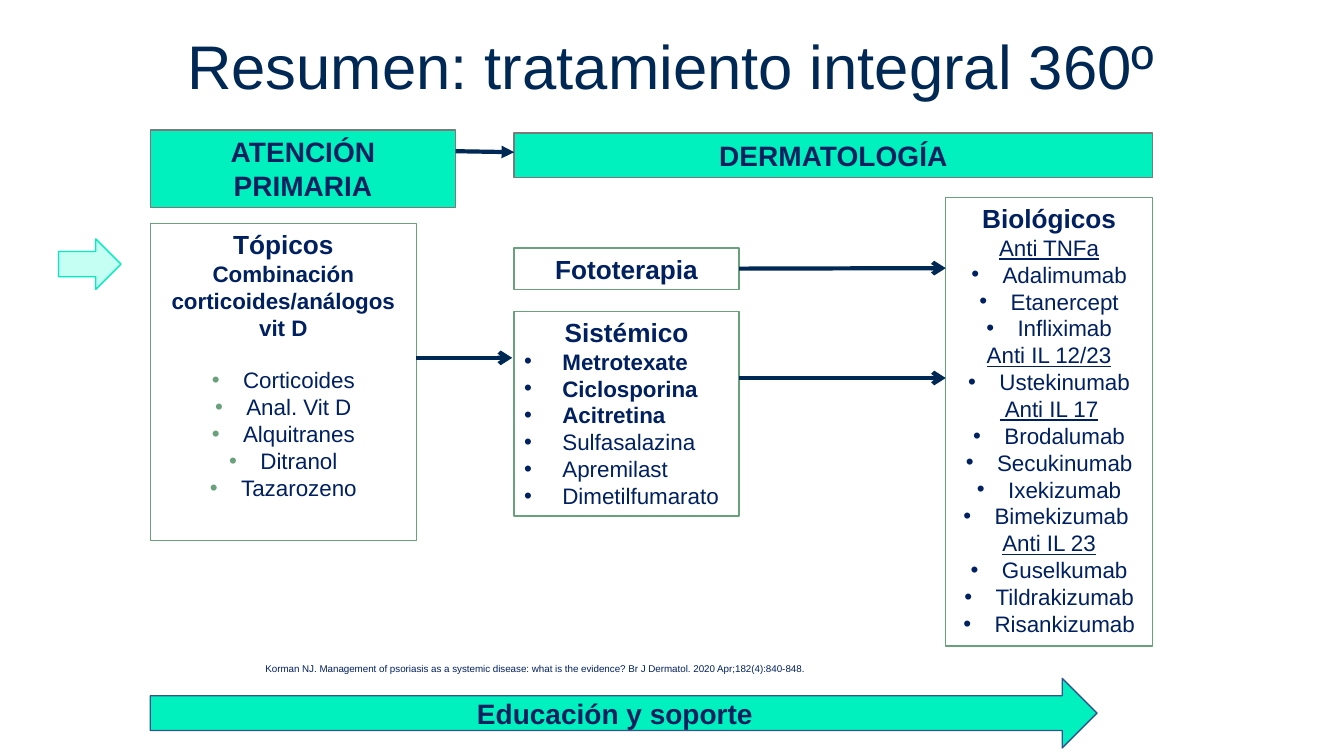
"""Build the slide on 360º treatment of psoriasis, from primary care to dermatology."""
from pptx import Presentation
from pptx.dml.color import RGBColor
from pptx.enum.shapes import MSO_CONNECTOR as LINE, MSO_SHAPE as SHAPE
from pptx.enum.text import MSO_ANCHOR as ANCHOR, MSO_AUTO_SIZE as FIT, PP_ALIGN as ALIGN
from pptx.oxml.ns import qn
from pptx.util import Inches, Pt
from lxml.etree import SubElement

NAVY, INK, GREEN, MINT, WHITE, GREY = "002855", "002060", "68A17C", "00F0BE", "FFFFFF", "7A7A7A"
PRIMARY, SECOND, THIRD, RIGHT = 1.49, 5.1, 9.38, 11.43
SECOND_EDGE = 7.33
PRIMARY_EDGE = 4.13


def paint(color, hex_value):
    color.rgb = RGBColor.from_string(hex_value)


def write(shape, lines, size, bold=False, color=INK, anchor=ANCHOR.TOP, fit=FIT.SHAPE_TO_FIT_TEXT):
    """Fill a shape with (text, style) lines; styles are b bold, u underlined, * bulleted, < left."""
    frame = shape.text_frame
    frame.text = "\n".join(text for text, style in lines)
    frame.word_wrap = True
    frame.auto_size = fit
    frame.vertical_anchor = anchor
    for index, (paragraph, (text, style)) in enumerate(zip(frame.paragraphs, lines)):
        paragraph.alignment = ALIGN.LEFT if "<" in style else ALIGN.CENTER
        if "*" in style:
            indent = Inches(0.38 if "<" in style else 0.31)
            properties = paragraph._p.get_or_add_pPr()
            properties.set("marL", str(indent))
            properties.set("indent", str(-indent))
            if "g" in style:
                bullet_color = SubElement(properties, qn("a:buClr"))
                SubElement(bullet_color, qn("a:srgbClr")).set("val", GREEN)
            SubElement(properties, qn("a:buFont")).set("typeface", "Arial")
            SubElement(properties, qn("a:buChar")).set("char", "•")
        for run in paragraph.runs:
            run.font.name = "Arial"
            run.font.size = Pt(size if index == 0 else 16)
            run.font.bold = bold if index == 0 else "b" in style
            run.font.underline = "u" in style
            paint(run.font.color, color)


prs = Presentation()
prs.slide_width, prs.slide_height = Inches(13.33), Inches(7.5)
slide = prs.slides.add_slide(prs.slide_layouts[6])
shapes = slide.shapes

title = shapes.add_textbox(*map(Inches, (1.21, 0.31, 10.9, 0.61)))
write(title, [("Resumen: tratamiento integral 360º", "")], 44, color=NAVY, fit=FIT.NONE)
title.text_frame.paragraphs[0].line_spacing = 0.9

biologic_groups = [
    ("Anti TNFa", ["Adalimumab", "Etanercept", "Infliximab"]),
    ("Anti IL 12/23", ["Ustekinumab"]),
    (" Anti IL 17", ["Brodalumab", "Secukinumab", "Ixekizumab", "Bimekizumab "]),
    ("Anti IL 23", ["Guselkumab", "Tildrakizumab", "Risankizumab"]),
]
biologics = [("Biológicos", "")]
for target, drugs in biologic_groups:
    biologics += [(target, "u")] + [(drug, "*") for drug in drugs]
topicals = [("Tópicos", ""), ("Combinación corticoides/análogos vit D", "b")]
topicals += [(drug, "*g") for drug in ("Corticoides", "Anal. Vit D", "Alquitranes", "Ditranol", "Tazarozeno")]
systemics = [("Sistémico", "")]
systemics += [(drug, "*<b") for drug in ("Metrotexate", "Ciclosporina", "Acitretina")]
systemics += [(drug, "*<") for drug in ("Sulfasalazina", "Apremilast", "Dimetilfumarato")]

panels = {}
for name, kind, left, top, right, height, fill, outline, lines, size, anchor in (
    ("biologics", SHAPE.RECTANGLE, THIRD, 1.96, RIGHT, 4.45, WHITE, GREEN, biologics, 18.7, ANCHOR.TOP),
    ("phototherapy", SHAPE.RECTANGLE, SECOND, 2.46, SECOND_EDGE, 0.41, WHITE, GREEN,
     [("Fototerapia", "")], 18.7, ANCHOR.TOP),
    ("topicals", SHAPE.RECTANGLE, PRIMARY, 2.22, PRIMARY_EDGE, 3.14, WHITE, GREEN, topicals, 18.7, ANCHOR.TOP),
    ("systemics", SHAPE.RECTANGLE, SECOND, 3.09, SECOND_EDGE, 2.03, WHITE, GREEN, systemics, 18.7, ANCHOR.TOP),
    ("support", SHAPE.RIGHT_ARROW, PRIMARY, 6.73, 10.88, 0.69, MINT, "325491",
     [("Educación y soporte", "")], 20, ANCHOR.MIDDLE),
    ("primary care", SHAPE.RECTANGLE, PRIMARY, 1.29, 4.52, 0.77, MINT, GREY,
     [("ATENCIÓN PRIMARIA", "")], 20, ANCHOR.TOP),
    ("dermatology", SHAPE.RECTANGLE, SECOND, 1.32, RIGHT, 0.44, MINT, GREY,
     [("DERMATOLOGÍA", "")], 20, ANCHOR.MIDDLE),
    ("entry", SHAPE.DOWN_ARROW, 0.64, 2.31, 1.14, 0.62, "C5FFF3", "00EEBB", [], 20, ANCHOR.MIDDLE),
):
    panel = shapes.add_shape(kind, *map(Inches, (left, top, right - left, height)))
    panel.shadow.inherit = False
    panel.fill.solid()
    paint(panel.fill.fore_color, fill)
    paint(panel.line.color, outline)
    panel.line.width = Pt(1)
    if lines:
        fit = FIT.SHAPE_TO_FIT_TEXT if kind == SHAPE.RECTANGLE else FIT.NONE
        write(panel, lines, size, bold=True, anchor=anchor, fit=fit)
    panels[name] = panel
panels["entry"].rotation = 270
panels["topicals"].text_frame.paragraphs[2].space_before = Pt(18.4)

for start, start_y, end, end_y, head, origin in (
    (PRIMARY_EDGE, 3.55, 5.08, 3.55, "arrow", None),
    (SECOND_EDGE, 2.66, THIRD, 2.66, "arrow", "phototherapy"),
    (4.52, 1.5, SECOND, 1.51, "triangle", None),
    (SECOND_EDGE, 3.75, THIRD, 3.75, "arrow", None),
):
    step = shapes.add_connector(LINE.STRAIGHT, *map(Inches, (start, start_y, end, end_y)))
    if origin:
        step.begin_connect(panels[origin], 3)
    paint(step.line.color, NAVY)
    step.line.width = Pt(3)
    SubElement(step.line._get_or_add_ln(), qn("a:tailEnd")).set("type", head)
    SubElement(step._element.spPr, qn("a:effectLst"))

citation = shapes.add_textbox(*map(Inches, (1.36, 6.53, 7.89, 0.22)))
write(citation, [("Korman NJ. Management of psoriasis as a systemic disease: what is the evidence? "
                  "Br J Dermatol. 2020 Apr;182(4):840-848.", "")], 7)

prs.save("out.pptx")
